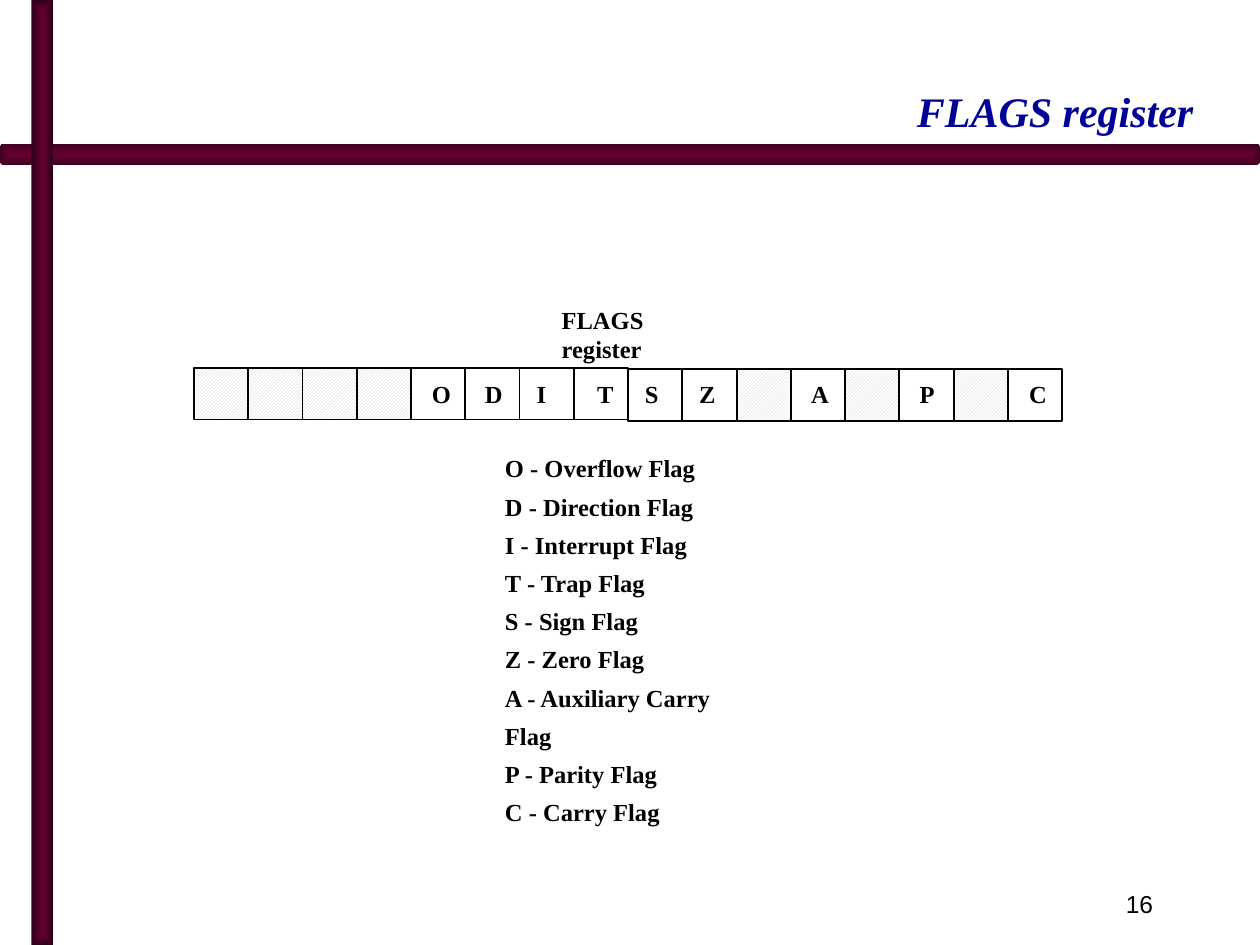
import pptx
import pptx.dml.color
import pptx.enum.dml
import pptx.enum.shapes
import pptx.enum.text
import pptx.oxml
import pptx.oxml.ns
import pptx.util

Inches = pptx.util.Inches
RGB = pptx.dml.color.RGBColor.from_string
SHAPE = pptx.enum.shapes.MSO_SHAPE
ALIGN = pptx.enum.text.PP_ALIGN
ANCHOR = pptx.enum.text.MSO_ANCHOR

theme = {
    "serif": "Times New Roman",
    "sans": "Arial",
    "title": RGB("000099"),
    "ink": RGB("000000"),
    "paper": RGB("FFFFFF"),
    "hatch": RGB("CBCBCB"),
    "bar": RGB("660033"),
    "across_edge": RGB("410020"),
    "down_edge": RGB("2F0018"),
    "title_size": pptx.util.Pt(24),
    "body_size": pptx.util.Pt(14),
}


def add_shape(kind, left, top, width, height):
    sp = s.shapes.add_shape(kind, Inches(left), Inches(top), Inches(width), Inches(height))
    sp.shadow.inherit = False
    return sp


def add_text(lines, left, top, width, height, wrap=True, align=ALIGN.LEFT,
             anchor=ANCHOR.TOP, font="serif", size="body_size", color="ink",
             bold=True, italic=False, spacing=1.0):
    sp = s.shapes.add_textbox(Inches(left), Inches(top), Inches(width), Inches(height))
    tf = sp.text_frame
    tf.word_wrap = wrap
    tf.vertical_anchor = anchor
    tf.text = "\n".join(lines)
    for p in tf.paragraphs:
        p.alignment = align
        p.line_spacing = spacing
        for r in p.runs:
            r.font.name = theme[font]
            r.font.size = theme[size]
            r.font.color.rgb = theme[color]
            r.font.bold = bold
            r.font.italic = italic


prs = pptx.Presentation()
prs.slide_width = Inches(10)
prs.slide_height = Inches(7.5)
s = prs.slides.add_slide(prs.slide_layouts[6])

bars = [
    (SHAPE.ROUNDED_RECTANGLE, (0, 1.14, 10, 0.17), "across_edge"),
    (SHAPE.RECTANGLE, (0.25, 0, 0.17, 7.5), "down_edge"),
]
for kind, box, edge in bars:
    sp = add_shape(kind, *box)
    sp.line.fill.background()
    sp.fill.gradient()
    for stop, name, position in zip(sp.fill.gradient_stops, ("bar", edge), (0, 1)):
        stop.color.rgb = theme[name]
        stop.position = position
    lin = sp._element.spPr.find(".//" + pptx.oxml.ns.qn("a:lin"))
    lin.getparent().replace(lin, pptx.oxml.parse_xml(
        f'<a:path {pptx.oxml.ns.nsdecls("a")} path="shape">'
        '<a:fillToRect l="50000" t="50000" r="50000" b="50000"/></a:path>'))

add_text(["16"], 7.17, 6.92, 2.08, 0.5, align=ALIGN.RIGHT,
         anchor=ANCHOR.MIDDLE, font="sans", bold=False)
add_text(["FLAGS register"], 0.83, 0.17, 8.74, 0.96, align=ALIGN.RIGHT,
         anchor=ANCHOR.BOTTOM, size="title_size", color="title", italic=True)
add_text(["FLAGS register"], 4.36, 2.37, 1.5, 0.34)

bits = "....ODITSZ.A.P.C"
pitch = 0.4307
for i, bit in enumerate(bits):
    sp = add_shape(SHAPE.RECTANGLE, 1.54 + i * pitch, 2.92 if i < 8 else 2.93, 0.43, 0.41)
    sp.line.color.rgb = theme["ink"]
    sp.line.width = pptx.util.Pt(1)
    if bit == ".":
        sp.fill.patterned()
        sp.fill.pattern = pptx.enum.dml.MSO_PATTERN.DARK_UPWARD_DIAGONAL
        sp.fill.fore_color.rgb = theme["hatch"]
        sp.fill.back_color.rgb = theme["paper"]
    else:
        sp.fill.background()

flags = [
    ("O", "Overflow", 3.33, 0.36),
    ("D", "Direction", 3.75, 0.35),
    ("I", "Interrupt", 4.16, 0.28),
    ("T", "Trap", 4.64, 0.34),
    ("S", "Sign", 5.02, 0.3),
    ("Z", "Zero", 5.45, 0.33),
    ("A", "Auxiliary Carry", 6.34, 0.33),
    ("P", "Parity", 7.2, 0.32),
    ("C", "Carry", 8.07, 0.33),
]
for letter, name, left, width in flags:
    add_text([letter], left, 2.96, width, 0.33, wrap=False)

add_text([f"{letter} - {name} Flag" for letter, name, left, width in flags],
         3.91, 3.48, 2.16, 3.02, spacing=1.3)

prs.save("out.pptx")
